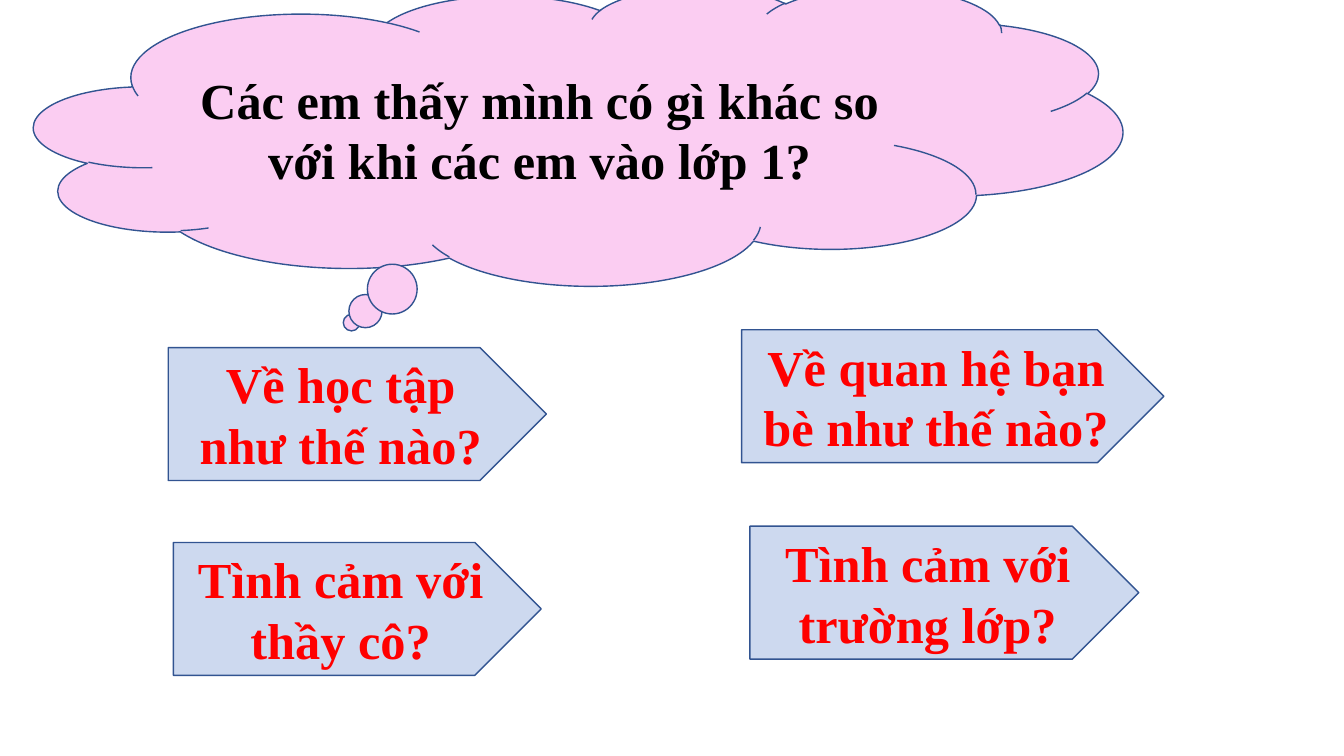
from pptx import Presentation
from pptx.dml.color import RGBColor
from pptx.enum.shapes import MSO_SHAPE
from pptx.enum.text import MSO_ANCHOR, PP_ALIGN
from pptx.util import Cm, Pt

COLORS = {
    "cloud": "FBCDF2",
    "arrow": "CDD9EF",
    "outline": "325491",
    "question": "000000",
    "topic": "FF0000",
}
TOPIC_HEIGHT = 3.35
TOPICS = [
    ("Về học tập như thế nào?", 4.24, 8.76, 9.53),
    ("Về quan hệ bạn bè như thế nào?", 18.69, 8.31, 10.64),
    ("Tình cảm với thầy cô?", 4.37, 13.67, 9.27),
    ("Tình cảm với trường lớp?", 18.9, 13.26, 9.8),
]


def rgb(name):
    return RGBColor.from_string(COLORS[name])


def write_text(sp, text, *, color, size=36, font="Times New Roman", bold=True):
    tf = sp.text_frame
    tf.word_wrap = True
    tf.vertical_anchor = MSO_ANCHOR.MIDDLE
    p = tf.paragraphs[0]
    p.alignment = PP_ALIGN.CENTER
    r = p.add_run()
    r.text = text
    r.font.name = font
    r.font.size = Pt(size)
    r.font.bold = bold
    r.font.color.rgb = rgb(color)


def add_box(s, kind, left, top, width, height, fill):
    sp = s.shapes.add_shape(kind, Cm(left), Cm(top), Cm(width), Cm(height))
    sp.shadow.inherit = False
    sp.fill.solid()
    sp.fill.fore_color.rgb = rgb(fill)
    sp.line.color.rgb = rgb("outline")
    sp.line.width = Pt(1)
    return sp


def add_question(s, text):
    sp = add_box(s, MSO_SHAPE.CLOUD_CALLOUT, 0.86, -0.33, 27.43, 7.52, "cloud")
    write_text(sp, text, color="question")


def add_topic(s, text, left, top, width):
    sp = add_box(s, MSO_SHAPE.PENTAGON, left, top, width, TOPIC_HEIGHT, "arrow")
    write_text(sp, text, color="topic")


def main():
    prs = Presentation()
    prs.slide_width = Cm(33.87)
    prs.slide_height = Cm(19.05)
    s = prs.slides.add_slide(prs.slide_layouts[6])
    add_question(s, "Các em thấy mình có gì khác so với khi các em vào lớp 1?")
    for topic in TOPICS:
        add_topic(s, *topic)
    prs.save("out.pptx")


if __name__ == "__main__":
    main()
